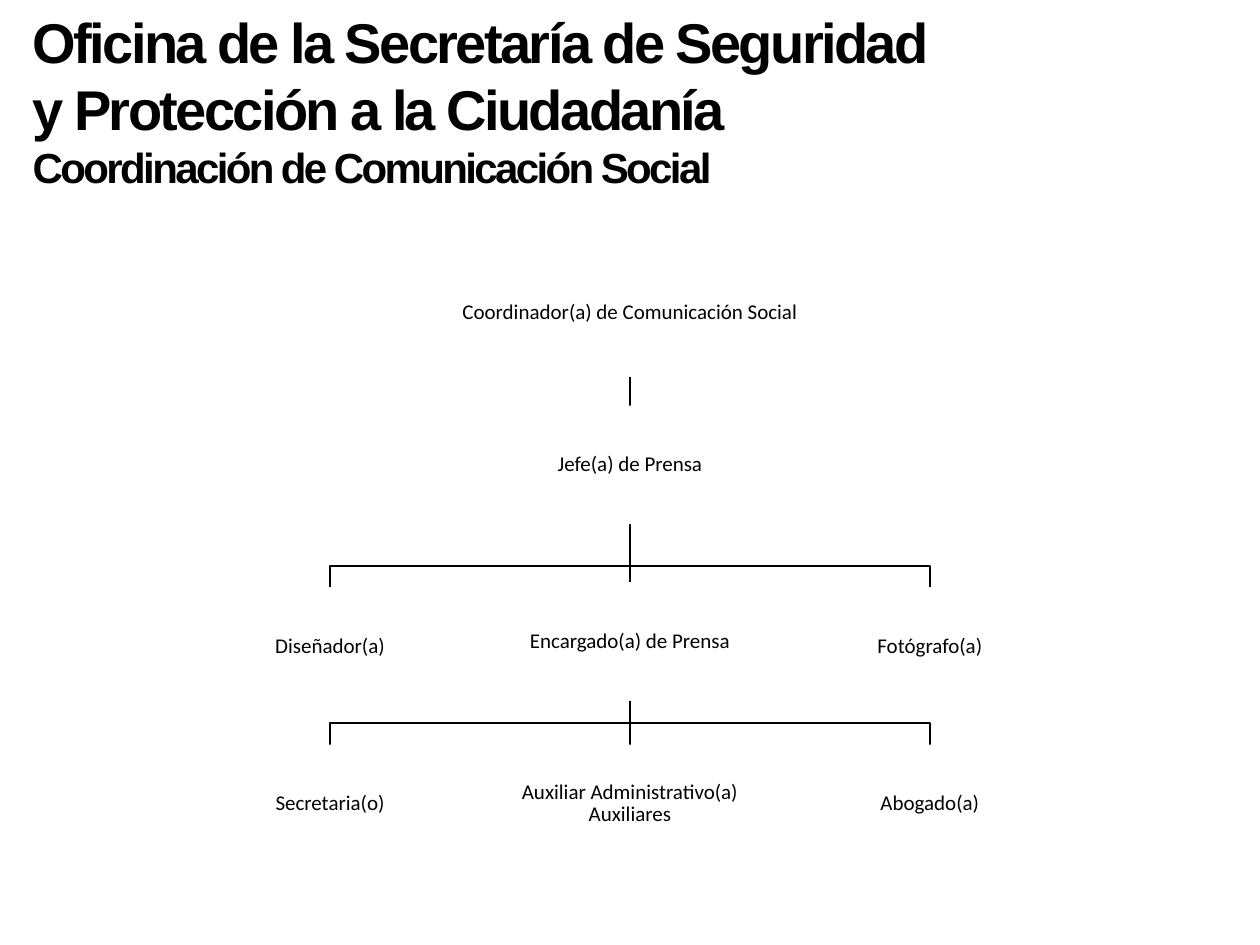
from lxml.etree import SubElement
from pptx import Presentation
from pptx.dml.color import RGBColor
from pptx.enum.shapes import MSO_CONNECTOR, MSO_SHAPE
from pptx.enum.text import MSO_ANCHOR, MSO_AUTO_SIZE, PP_ALIGN
from pptx.oxml.ns import qn
from pptx.util import Inches, Pt

COLORS = {"ink": "000000", "paper": "FFFFFF"}
INK, PAPER = (RGBColor.from_string(COLORS[key]) for key in ("ink", "paper"))
COLUMN_STEP, POST_WIDTH, POST_HEIGHT = 2.38, 2.04, 0.94
BEND_GAP = 0.17

POSTS = {
    "coordinator": (["Coordinador(a) de Comunicación Social"], 1, 0, 3.3, 1.02),
    "press_chief": (["Jefe(a) de Prensa"], 1, 1.25, 2.36, POST_HEIGHT),
    "designer": (["Diseñador(a)"], 0, 2.69, POST_WIDTH, POST_HEIGHT),
    "press_officer": (["Encargado(a) de Prensa"], 1, 2.65, POST_WIDTH, POST_HEIGHT),
    "photographer": (["Fotógrafo(a)"], 2, 2.69, POST_WIDTH, POST_HEIGHT),
    "secretary": (["Secretaria(o)"], 0, 3.94, POST_WIDTH, POST_HEIGHT),
    "assistants": (["Auxiliar Administrativo(a)", "Auxiliares"], 1, 3.94, POST_WIDTH, POST_HEIGHT),
    "lawyer": (["Abogado(a)"], 2, 3.94, POST_WIDTH, POST_HEIGHT),
}
REPORTS = {
    "coordinator": ["press_chief"],
    "press_chief": ["designer", "press_officer", "photographer"],
    "press_officer": ["secretary", "assistants", "lawyer"],
}


def apply_format(target, values):
    """Set each named attribute on the target."""
    for name, value in values.items():
        setattr(target, name, value)


def add_heading(slide, left, top, width, height):
    """Place the office name and its unit in the title placeholder."""
    heading = slide.shapes.title
    apply_format(heading, {"left": Inches(left), "top": Inches(top),
                           "width": Inches(width), "height": Inches(height)})
    frame = heading.text_frame
    apply_format(frame, {"word_wrap": True, "vertical_anchor": MSO_ANCHOR.TOP,
                         "auto_size": MSO_AUTO_SIZE.SHAPE_TO_FIT_TEXT})
    lines = {"Oficina de la Secretaría de Seguridad y Protección a la Ciudadanía": 32,
             "Coordinación de Comunicación Social": 24}
    frame.text = "\n".join(lines)
    for paragraph, size in zip(frame.paragraphs, lines.values()):
        apply_format(paragraph, {"alignment": PP_ALIGN.LEFT, "space_before": Pt(0)})
        font = paragraph.runs[0].font
        apply_format(font, {"name": "Arial", "size": Pt(size), "bold": True})
        font.color.rgb = INK
        paragraph.runs[0]._r.get_or_add_rPr().set("spc", "-150")


def add_link(slide, start, end):
    """Draw a straight or bent line from one post down to another."""
    (x1, y1), (x2, y2) = [[Inches(value) for value in point] for point in (start, end)]
    if x1 == x2:
        link = slide.shapes.add_connector(MSO_CONNECTOR.STRAIGHT, x1, y1, x2, y2)
        SubElement(link._element.spPr, qn("a:effectLst"))
    else:
        bend = y2 - Inches(BEND_GAP)
        builder = slide.shapes.build_freeform(x1, y1)
        builder.add_line_segments([(x1, bend), (x2, bend), (x2, y2)], close=False)
        link = builder.convert_to_shape()
        link.fill.background()
        link.shadow.inherit = False
    link.line.color.rgb = INK
    link.line.width = Pt(1)


def add_post(slide, lines, left, top, width, height, filled):
    """Draw one post of the chart with its centred label."""
    post = slide.shapes.add_shape(MSO_SHAPE.RECTANGLE, Inches(left), Inches(top),
                                  Inches(width), Inches(height))
    post.shadow.inherit = False
    post.line.fill.background()
    if filled:
        post.fill.solid()
        post.fill.fore_color.rgb = PAPER
    else:
        post.fill.background()
    frame = post.text_frame
    margins = {f"margin_{side}": Inches(0.01) for side in ("left", "top", "right", "bottom")}
    apply_format(frame, {"word_wrap": True, "vertical_anchor": MSO_ANCHOR.MIDDLE, **margins})
    frame.text = "\n".join(lines)
    for paragraph in frame.paragraphs:
        apply_format(paragraph, {"alignment": PP_ALIGN.CENTER, "line_spacing": 0.9})
        apply_format(paragraph.font, {"name": "Calibri", "size": Pt(12)})
        paragraph.font.color.rgb = INK


def add_org_chart(slide, left, top, width):
    """Place the links and posts in a box of the given width."""
    centers, tops = {}, {}
    for key, (_, column, offset, _, _) in POSTS.items():
        centers[key] = left + width / 2 + (column - 1) * COLUMN_STEP
        tops[key] = top + offset
    for chief, reports in REPORTS.items():
        start = centers[chief], tops[chief] + POSTS[chief][-1]
        for report in reports:
            add_link(slide, start, (centers[report], tops[report]))
    for key, (lines, _, _, post_width, post_height) in POSTS.items():
        add_post(slide, lines, centers[key] - post_width / 2, tops[key],
                 post_width, post_height, key != "coordinator")


def main():
    """Build and save the slide."""
    deck = Presentation()
    deck.slide_width, deck.slide_height = Inches(10), Inches(7.5)
    slide = deck.slides.add_slide(deck.slide_layouts.get_by_name("Title Only"))
    add_org_chart(slide, 1.6, 1.97, 6.8)
    add_heading(slide, 0.16, 0.01, 7.46, 1.58)
    deck.save("out.pptx")


if __name__ == "__main__":
    main()
